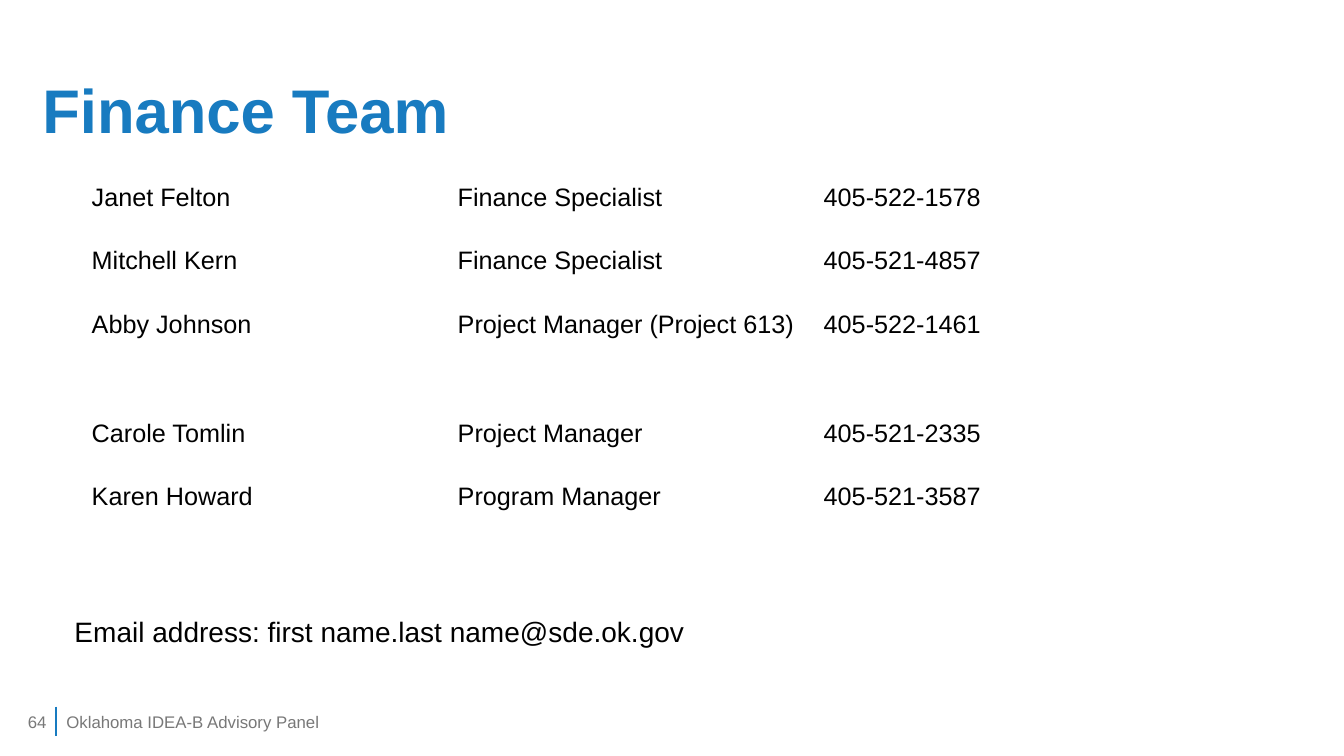
"""Build the Finance Team contact slide."""
from lxml import etree
from pptx import Presentation
from pptx import util as u
from pptx.dml import color
from pptx.enum import shapes, text
from pptx.oxml import ns

COLORS = {"blue": "187BC0", "gray": "787878", "black": "000000"}


def write(tf, value, size=18, tint="black", bold=False,
          align=text.PP_ALIGN.LEFT, anchor=text.MSO_ANCHOR.TOP):
    """Put one formatted paragraph in a text frame."""
    tf.word_wrap = True
    tf.vertical_anchor = anchor
    p = tf.paragraphs[0]
    p.alignment = align
    r = p.add_run()
    r.text = value
    r.font.name = "Arial"
    r.font.size = u.Pt(size)
    r.font.bold = bold
    r.font.color.rgb = color.RGBColor.from_string(COLORS[tint])
    return p


prs = Presentation()
prs.slide_width, prs.slide_height = u.Inches(13.33), u.Inches(7.5)
s = prs.slides.add_slide(prs.slide_layouts[5])
middle = text.MSO_ANCHOR.MIDDLE

title = s.shapes.title
title.left, title.top = u.Inches(0.32), u.Inches(0.4)
title.width, title.height = u.Inches(12.69), u.Inches(1.45)
title.text_frame.auto_size = text.MSO_AUTO_SIZE.NONE
p = write(title.text_frame, "Finance Team", size=44, tint="blue", bold=True, anchor=middle)
p.line_spacing = 0.9

team = [
    ("Janet Felton", "Finance Specialist", "405-522-1578"),
    ("Mitchell Kern", "Finance Specialist", "405-521-4857"),
    ("Abby Johnson", "Project Manager (Project 613)", "405-522-1461"),
    ("Carole Tomlin", "Project Manager", "405-521-2335"),
    ("Karen Howard", "Program Manager", "405-521-3587"),
]
heights = [0.63, 0.63, 1.08, 0.63, 0.63]
table = s.shapes.add_table(len(team), 3, u.Inches(0.81), u.Inches(1.77),
                           u.Inches(10.9), u.Inches(sum(heights))).table
table.first_row = table.horz_banding = False
for col in table.columns:
    col.width = u.Inches(3.63)
for row, height, member in zip(table.rows, heights, team):
    row.height = u.Inches(height)
    for cell, value in zip(row.cells, member):
        cell.fill.background()
        write(cell.text_frame, value)

texts = [
    (0.64, 6.05, 10.22, 0.44, "Email address: first name.last name@sde.ok.gov", dict(size=20)),
    (0.56, 6.96, 6.52, 0.4, "Oklahoma IDEA-B Advisory Panel",
     dict(size=12, tint="gray", anchor=middle)),
    (0, 6.96, 0.56, 0.4, "64",
     dict(size=12, tint="gray", anchor=middle, align=text.PP_ALIGN.RIGHT)),
]
for x, y, w, h, value, style in texts:
    sp = s.shapes.add_textbox(u.Inches(x), u.Inches(y), u.Inches(w), u.Inches(h))
    write(sp.text_frame, value, **style)

divider = s.shapes.add_connector(shapes.MSO_CONNECTOR.STRAIGHT, u.Inches(0.56),
                                 u.Inches(7.01), u.Inches(0.56), u.Inches(7.3))
divider.line.color.rgb = color.RGBColor.from_string(COLORS["blue"])
divider.line.width = u.Pt(1.5)
etree.SubElement(divider._element.spPr, ns.qn("a:effectLst"))

prs.save("out.pptx")
